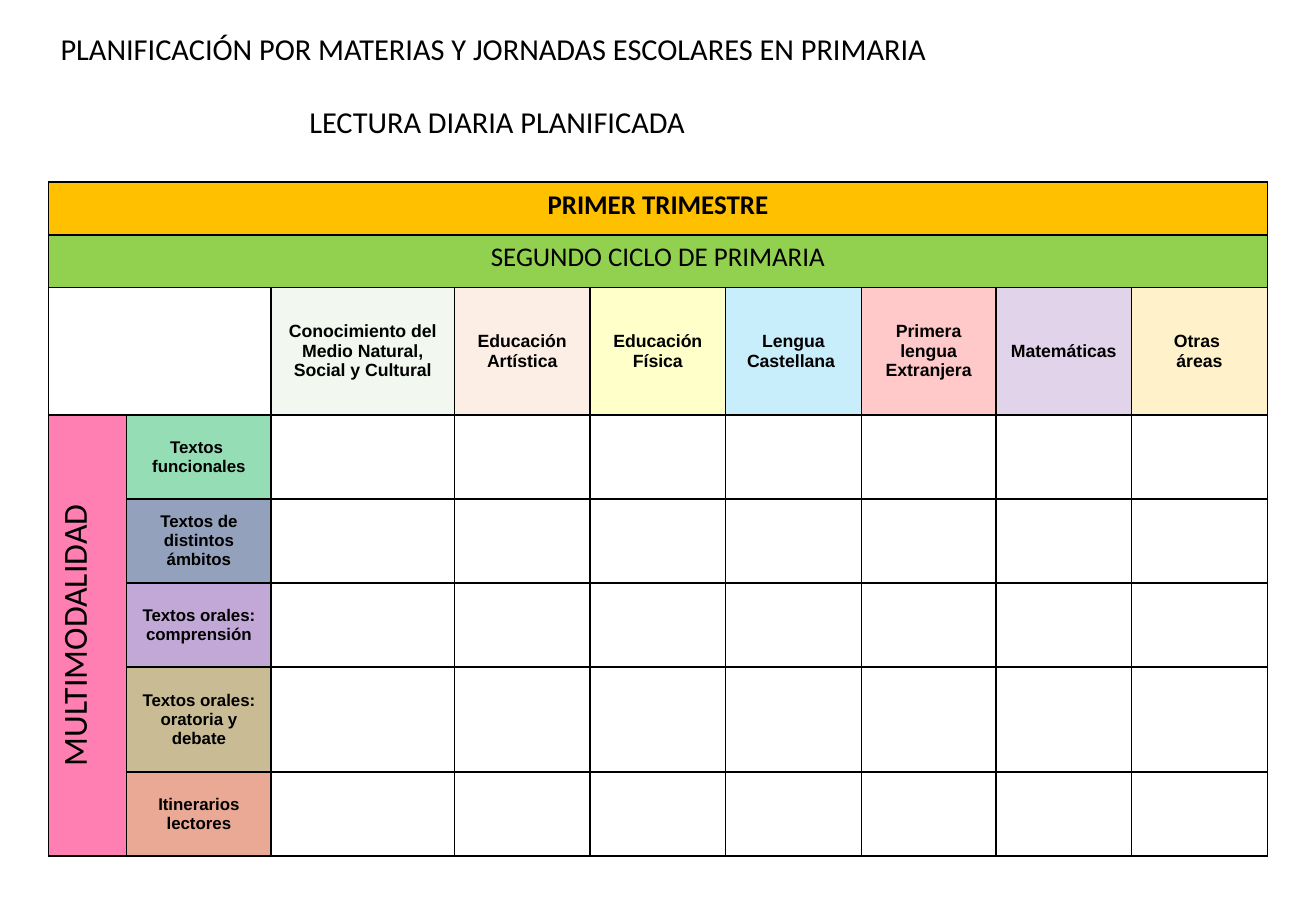
from dataclasses import dataclass

from lxml import etree
from pptx import Presentation
from pptx.dml.color import RGBColor
from pptx.enum.text import MSO_ANCHOR, MSO_AUTO_SIZE, PP_ALIGN
from pptx.oxml.ns import qn
from pptx.util import Emu, Pt

CENTER, LEFT = PP_ALIGN.CENTER, PP_ALIGN.LEFT
MIDDLE, TOP = MSO_ANCHOR.MIDDLE, MSO_ANCHOR.TOP
FIT_SHAPE = MSO_AUTO_SIZE.SHAPE_TO_FIT_TEXT
EMU_PER_PX = 7620  # 120 px to the inch


@dataclass(frozen=True)
class Theme:
    heading_font: str = "Calibri"
    label_font: str = "Arial"
    title_size: float = 18
    band_size: float = 16
    subject_size: float = 10.5
    text_type_size: float = 10
    side_size: float = 20
    ink: str = "000000"
    paper: str = "FFFFFF"
    term: str = "FFC000"
    cycle: str = "92D050"
    side: str = "FF0066"
    side_opacity: int = 50
    subject_opacity: int = 21
    text_type_opacity: int = 42
    border_width: float = 1


THEME = Theme()

SUBJECTS = [
    (["Conocimiento del Medio Natural, Social y Cultural"], "C5E0B4"),
    (["Educación", "Artística"], "F4B183"),
    (["Educación Física"], "FFFF00"),
    (["Lengua Castellana "], "00B0F0"),
    (["Primera lengua Extranjera"], "FF0000"),
    (["Matemáticas"], "7030A0"),
    (["Otras ", "áreas"], "FFC000"),
]
TEXT_TYPES = [
    (["Textos ", "funcionales"], "00B050"),
    (["Textos de distintos ámbitos"], "002060"),
    (["Textos orales: comprensión"], "7030A0"),
    (["Textos orales: oratoria y debate"], "806000"),
    (["Itinerarios lectores"], "CC3300"),
]
COLUMN_WIDTHS = [77, 143, 181, 134, 134, 134, 133, 134, 134]
ROW_HEIGHTS = [52, 52, 126, 83, 83, 83, 104, 83]
SUBJECT_ROW, FIRST_TEXT_ROW = 2, 3
SIDE_COLUMN, TEXT_TYPE_COLUMN, FIRST_SUBJECT_COLUMN = 0, 1, 2


def px(length):
    return Emu(length * EMU_PER_PX)


def write(para, text, *, font, size, bold=False, align=CENTER, before=0,
          indent=0):
    para.alignment = align
    para.space_before = Pt(before)
    if indent:
        para._p.get_or_add_pPr().set("marL", str(px(indent)))
    span = para.add_run()
    span.text = text
    span.font.name = font
    span.font.size = Pt(size)
    span.font.bold = bold
    span.font.color.rgb = RGBColor.from_string(THEME.ink)


def fill_cell(cell, color, opacity=100):
    cell.fill.solid()
    cell.fill.fore_color.rgb = RGBColor.from_string(color)
    if opacity < 100:
        solid = cell._tc.get_or_add_tcPr().find(qn("a:solidFill"))
        etree.SubElement(solid[0], qn("a:alpha"), val=str(opacity * 1000))


def border_cell(cell):
    properties = cell._tc.get_or_add_tcPr()
    for index, side in enumerate(("a:lnL", "a:lnR", "a:lnT", "a:lnB")):
        line = etree.Element(qn(side), w=str(Pt(THEME.border_width)))
        solid = etree.SubElement(line, qn("a:solidFill"))
        etree.SubElement(solid, qn("a:srgbClr"), val=THEME.ink)
        properties.insert(index, line)


def write_cell(cell, lines, color, opacity=100, anchor=MIDDLE, **text_format):
    fill_cell(cell, color, opacity)
    cell.vertical_anchor = anchor
    frame = cell.text_frame
    for index, line in enumerate(lines):
        para = frame.add_paragraph() if index else frame.paragraphs[0]
        write(para, line, **text_format)


def add_titles(page, left, top, width, height):
    box = page.shapes.add_textbox(px(left), px(top), px(width), px(height))
    frame = box.text_frame
    frame.word_wrap = False
    frame.auto_size = FIT_SHAPE
    title_format = {"font": THEME.heading_font, "size": THEME.title_size}
    write(frame.paragraphs[0],
          "PLANIFICACIÓN POR MATERIAS Y JORNADAS ESCOLARES EN PRIMARIA",
          align=LEFT, **title_format)
    write(frame.add_paragraph(), "LECTURA DIARIA PLANIFICADA",
          before=21.5, indent=7, **title_format)


def add_bands(table):
    last_column = len(COLUMN_WIDTHS) - 1
    bands = [("PRIMER TRIMESTRE", THEME.term, True),
             ("SEGUNDO CICLO DE PRIMARIA", THEME.cycle, False)]
    for row, (text, color, bold) in enumerate(bands):
        table.cell(row, 0).merge(table.cell(row, last_column))
        write_cell(table.cell(row, 0), [text], color, anchor=TOP, bold=bold,
                   font=THEME.heading_font, size=THEME.band_size)


def add_subjects(table):
    table.cell(SUBJECT_ROW, SIDE_COLUMN).merge(
        table.cell(SUBJECT_ROW, TEXT_TYPE_COLUMN))
    for column, (lines, color) in enumerate(SUBJECTS, FIRST_SUBJECT_COLUMN):
        write_cell(table.cell(SUBJECT_ROW, column), lines, color,
                   THEME.subject_opacity, font=THEME.label_font,
                   size=THEME.subject_size, bold=True)


def add_text_types(table):
    side_cell = table.cell(FIRST_TEXT_ROW, SIDE_COLUMN)
    side_cell.merge(table.cell(len(ROW_HEIGHTS) - 1, SIDE_COLUMN))
    write_cell(side_cell, ["MULTIMODALIDAD"], THEME.side, THEME.side_opacity,
               font=THEME.heading_font, size=THEME.side_size)
    side_cell._tc.get_or_add_tcPr().set("vert", "vert270")
    for row, (lines, color) in enumerate(TEXT_TYPES, FIRST_TEXT_ROW):
        write_cell(table.cell(row, TEXT_TYPE_COLUMN), lines, color,
                   THEME.text_type_opacity, font=THEME.label_font,
                   size=THEME.text_type_size, bold=True)


def add_planner(page, left, top):
    table = page.shapes.add_table(
        len(ROW_HEIGHTS), len(COLUMN_WIDTHS), px(left), px(top),
        px(sum(COLUMN_WIDTHS)), px(sum(ROW_HEIGHTS))).table
    table.first_row = False
    table.horz_banding = False
    for column, width in zip(table.columns, COLUMN_WIDTHS):
        column.width = px(width)
    for row, height in zip(table.rows, ROW_HEIGHTS):
        row.height = px(height)
    for cell in table.iter_cells():
        fill_cell(cell, THEME.paper)
        border_cell(cell)
    add_bands(table)
    add_subjects(table)
    add_text_types(table)


def main():
    deck = Presentation()
    deck.slide_width, deck.slide_height = px(1300), px(900)
    page = deck.slides.add_slide(deck.slide_layouts[6])
    add_titles(page, 48, 24, 1204, 121)
    add_planner(page, 48, 180)
    deck.save("out.pptx")


if __name__ == "__main__":
    main()
